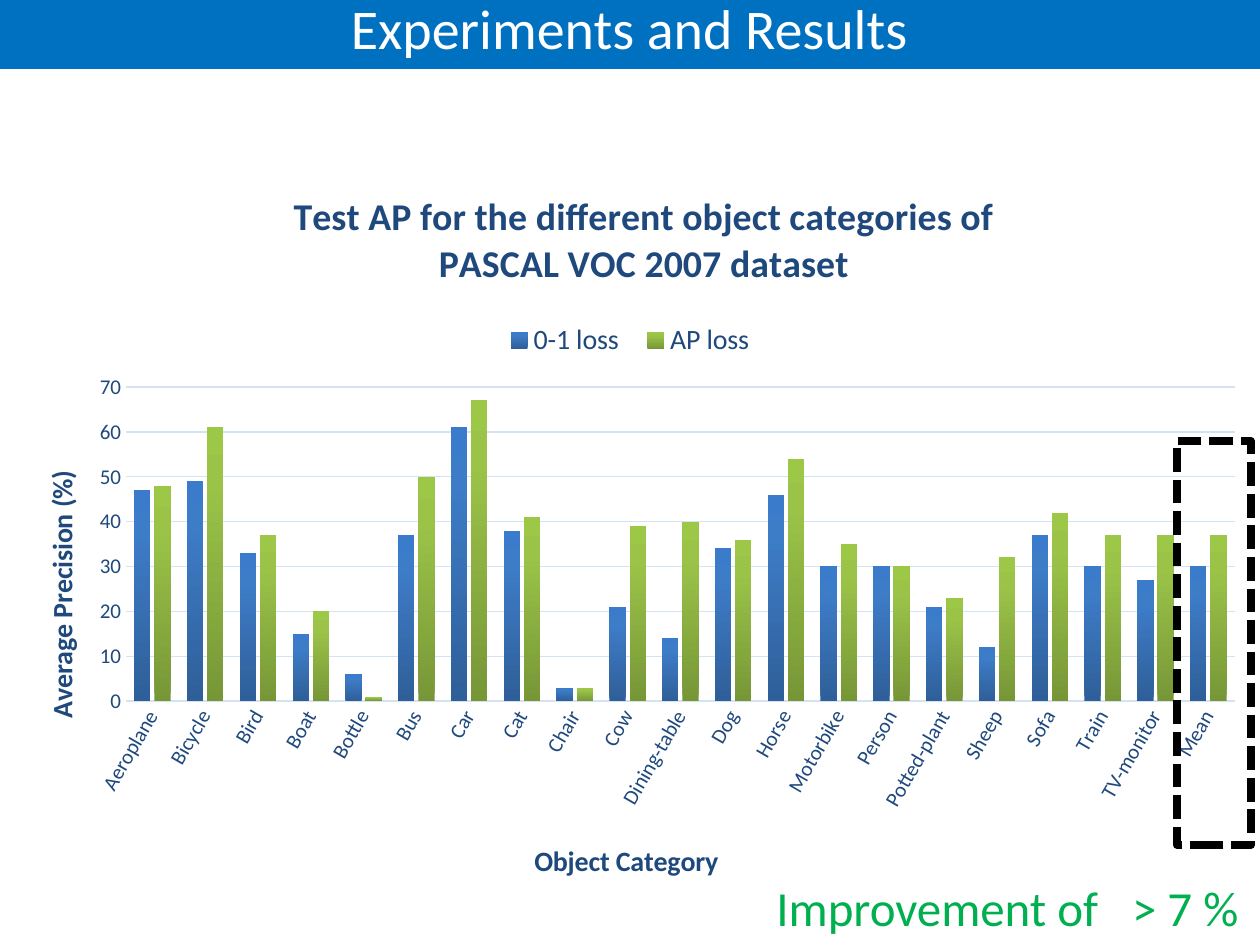
from lxml import etree
from pptx import Presentation
from pptx import util as u
from pptx.chart import data as chart_data
from pptx.dml import color
from pptx.enum import chart as charts, dml, shapes, text
from pptx.oxml import ns

SCALE = 9144000 / 1260
FONT = "Calibri"
NAVY = "1F497D"
PALE = "D4E3F4"
CATEGORIES = [
    "Aeroplane", "Bicycle", "Bird", "Boat", "Bottle", "Bus", "Car", "Cat",
    "Chair", "Cow", "Dining-table", "Dog", "Horse", "Motorbike", "Person",
    "Potted-plant", "Sheep", "Sofa", "Train", "TV-monitor", "Mean",
]
SERIES = [
    ("0-1 loss",
     [47, 49, 33, 15, 6, 37, 61, 38, 3, 21, 14, 34, 46, 30, 30, 21, 12, 37, 30, 27, 30],
     [(0, "2F5F99"), (80, "3D7CC7"), (100, "3A7CCB")]),
    ("AP loss",
     [48, 61, 37, 20, 1, 50, 67, 41, 3, 39, 40, 36, 54, 35, 30, 23, 32, 42, 37, 37, 37],
     [(0, "779737"), (80, "9BC348"), (100, "9DC746")]),
]


def px(*lengths):
    return [u.Emu(round(length * SCALE)) for length in lengths]


def rgb(value):
    return color.RGBColor.from_string(value)


def set_all(target, values):
    for name, value in values.items():
        setattr(target, name, value)


def style_font(font, size, fill, bold=False):
    set_all(font, {"name": FONT, "size": u.Pt(size), "bold": bold})
    font.color.rgb = rgb(fill)


def style_line(line, fill, width):
    line.color.rgb = rgb(fill)
    line.width = u.Pt(width)


def add_child(parent, tag, **attributes):
    return etree.SubElement(parent, ns.qn(tag), **attributes)


def add_rectangle(parent, place):
    box = parent.add_shape(shapes.MSO_SHAPE.RECTANGLE, *px(*place))
    box.shadow.inherit = False
    return box


def add_banner(page):
    banner = add_rectangle(page.shapes, (0, -4, 1260, 73))
    banner.fill.solid()
    banner.fill.fore_color.rgb = rgb("0070C0")
    banner.line.fill.background()
    page.shapes._spTree.insert(2, banner._element)


def format_title(page):
    title = page.shapes.title
    set_all(title, dict(zip(("left", "top", "width", "height"), px(338, -13, 583, 81))))
    frame = title.text_frame
    frame.text = "Experiments and Results"
    set_all(frame, {"word_wrap": True, "auto_size": text.MSO_AUTO_SIZE.NONE,
                    "vertical_anchor": text.MSO_ANCHOR.TOP})
    para = frame.paragraphs[0]
    para.alignment = text.PP_ALIGN.CENTER
    style_font(para.runs[0].font, 32, "FFFFFF")


def place_part(element, index, x, y, w=None, h=None, inner=False):
    for old in element.findall(ns.qn("c:layout")):
        element.remove(old)
    layout = etree.Element(ns.qn("c:layout"))
    manual = add_child(layout, "c:manualLayout")
    if inner:
        add_child(manual, "c:layoutTarget", val="inner")
    for name in ("xMode", "yMode"):
        add_child(manual, f"c:{name}", val="edge")
    for name, value in {"x": x, "y": y, "w": w, "h": h}.items():
        if value is not None:
            add_child(manual, f"c:{name}", val=str(value))
    element.insert(index, layout)


def write_title(title, wording, size, x, y):
    title.text_frame.text = wording
    for para in title.text_frame.paragraphs:
        style_font(para.runs[0].font, size, NAVY, True)
    place_part(title._element, 1, x, y)


def fill_gradient(series, stops):
    gradient = etree.Element(ns.qn("a:gradFill"), rotWithShape="1")
    stop_list = add_child(gradient, "a:gsLst")
    for position, value in stops:
        stop = add_child(stop_list, "a:gs", pos=str(position * 1000))
        add_child(stop, "a:srgbClr", val=value)
    add_child(gradient, "a:lin", ang="16200000", scaled="0")
    series.format.line.fill.background()
    series._element.get_or_add_spPr().insert(0, gradient)


def format_axis(axis, wording, x, y):
    set_all(axis, {"major_tick_mark": charts.XL_TICK_MARK.NONE,
                   "minor_tick_mark": charts.XL_TICK_MARK.NONE})
    style_font(axis.tick_labels.font, 12, NAVY)
    write_title(axis.axis_title, wording, 16, x, y)


def add_loss_chart(page):
    data = chart_data.CategoryChartData()
    data.categories = CATEGORIES
    for name, values, _ in SERIES:
        data.add_series(name, values)
    chart = page.shapes.add_chart(
        charts.XL_CHART_TYPE.COLUMN_CLUSTERED, *px(0, 180, 1260, 714), data).chart
    style_font(chart.font, 10, "000000")
    write_title(chart.chart_title, "Test AP for the different object categories of\n"
                "PASCAL VOC 2007 dataset", 21.6, 0.23, 0.01)

    plot = chart.plots[0]
    set_all(plot, {"gap_width": 100, "overlap": -24, "vary_by_categories": False})
    for series, (_, _, stops) in zip(plot.series, SERIES):
        fill_gradient(series, stops)

    category, value = chart.category_axis, chart.value_axis
    format_axis(category, "Object Category", 0.42, 0.92)
    style_line(category.format.line, PALE, 0.75)
    category._element.txPr.bodyPr.set("rot", "-3600000")
    format_axis(value, "Average Precision (%)", 0.03, 0.4)
    set_all(value, {"minimum_scale": 0, "maximum_scale": 70, "major_unit": 10})
    value.format.line.fill.background()
    style_line(value.major_gridlines.format.line, PALE, 0.75)

    chart.has_legend = True
    set_all(chart.legend, {"position": charts.XL_LEGEND_POSITION.TOP,
                           "include_in_layout": False})
    style_font(chart.legend.font, 16, NAVY)
    place_part(chart.legend._element, 1, 0.39, 0.2, 0.22, 0.05)
    place_part(chart._chartSpace.chart.plotArea, 0, 0.1, 0.29, 0.88, 0.44, inner=True)


def add_improvement(page):
    group = page.shapes.add_group_shape()
    frame = add_rectangle(group.shapes, (1177, 441, 74, 404))
    frame.fill.background()
    style_line(frame.line, "000000", 4.5)
    frame.line.dash_style = dml.MSO_LINE.SQUARE_DOT
    etree.SubElement
    frame.line._get_or_add_ln().find(ns.qn("a:prstDash")).set("val", "sysDash")

    box = group.shapes.add_textbox(*px(764, 871, 496, 72))
    box.text_frame.word_wrap = True
    para = box.text_frame.paragraphs[0]
    for wording, spacing in (("Improvement of", 0), (" ", 1300), ("> 7 %", 0)):
        span = para.add_run()
        span.text = wording
        style_font(span.font, 28, "00B050")
        if spacing:
            span.font._element.set("spc", str(spacing))


def main():
    deck = Presentation()
    deck.slide_width, deck.slide_height = px(1260, 945)
    page = deck.slides.add_slide(deck.slide_layouts[5])
    add_banner(page)
    add_loss_chart(page)
    add_improvement(page)
    format_title(page)
    deck.save("out.pptx")


if __name__ == "__main__":
    main()
